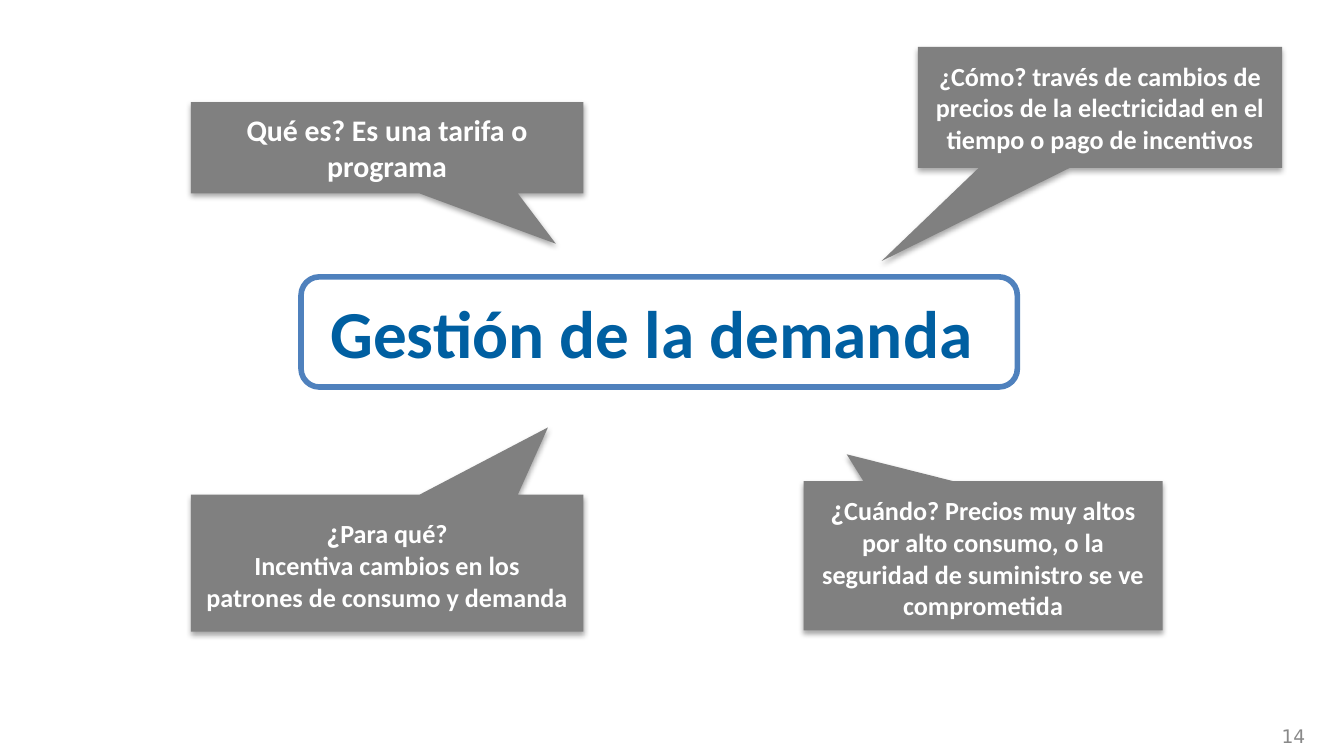
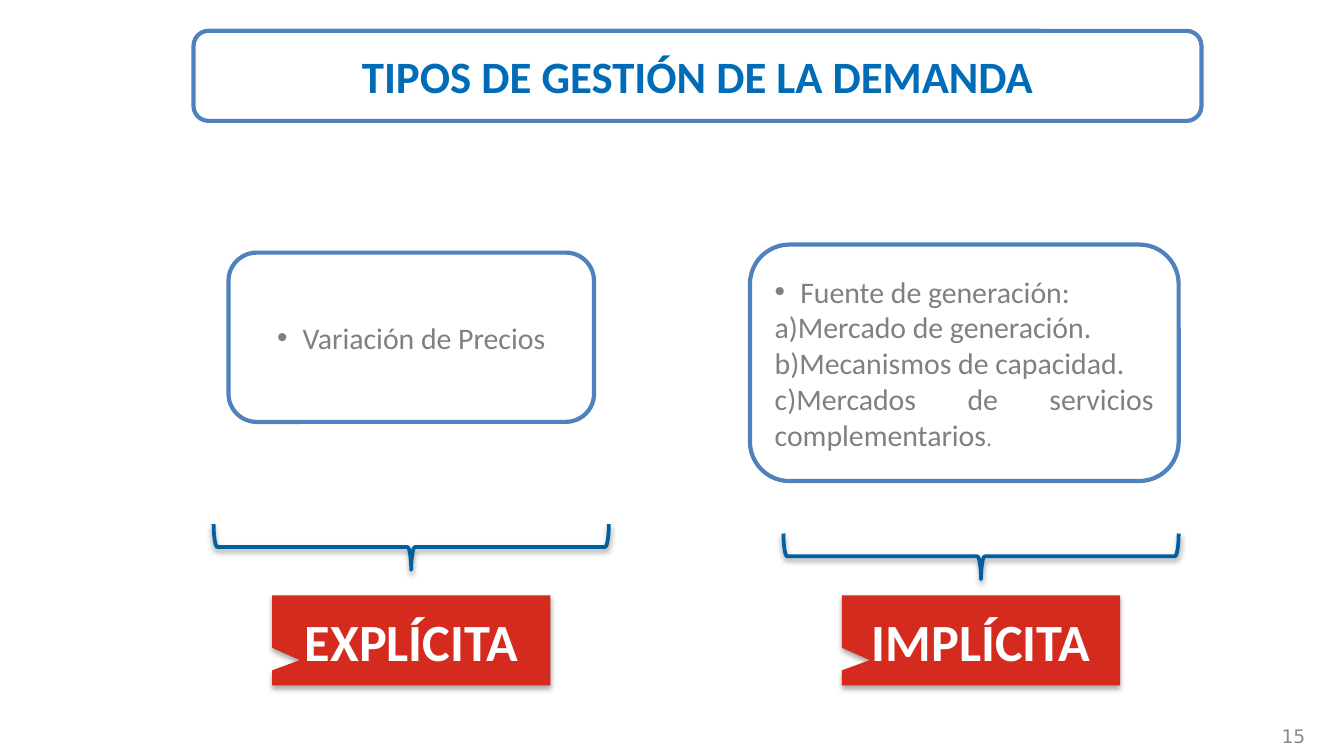
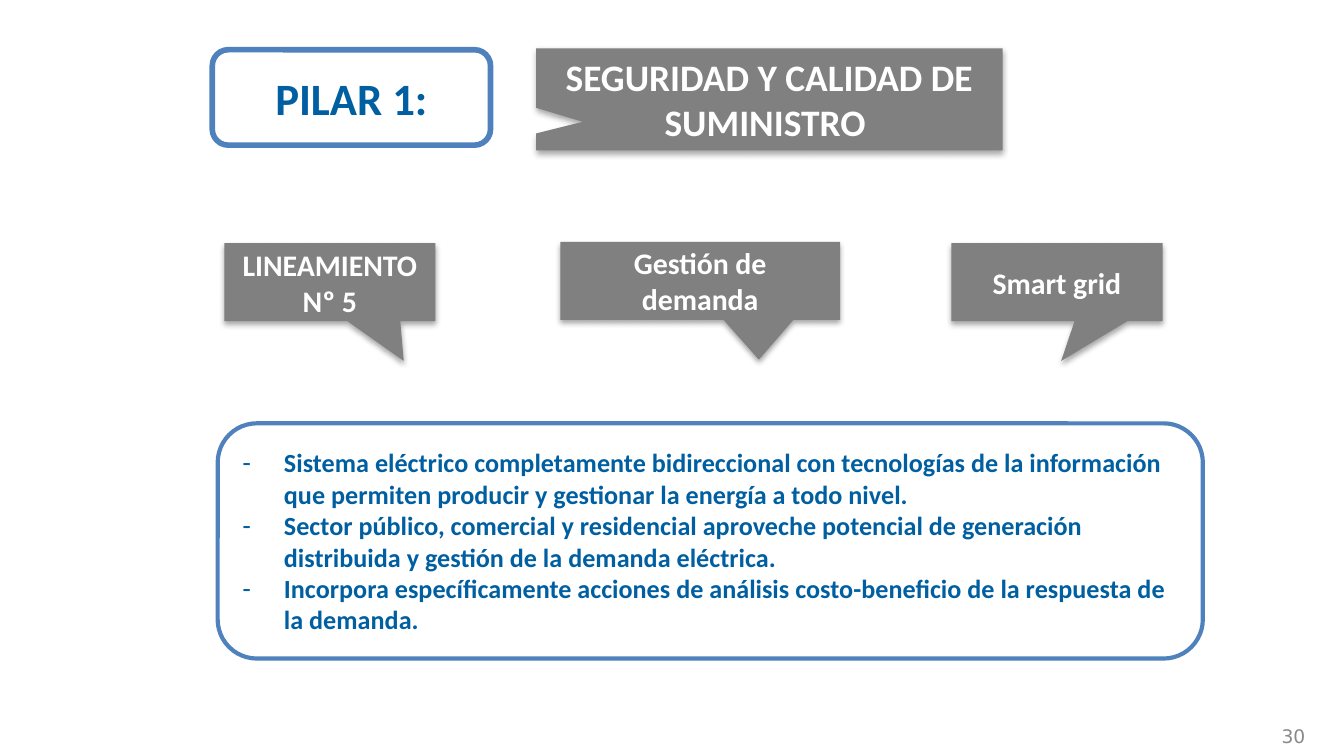
from dataclasses import dataclass

from lxml.etree import SubElement
from pptx import Presentation
from pptx.dml.color import RGBColor
from pptx.enum.shapes import MSO_SHAPE as Preset
from pptx.enum.text import MSO_ANCHOR as Anchor, PP_ALIGN as Align
from pptx.oxml.ns import qn
from pptx.util import Inches, Pt


@dataclass(frozen=True)
class Theme:
    font: str = "Calibri"
    number_font: str = "DejaVu Sans"
    white: str = "FFFFFF"
    gray: str = "808080"
    number_gray: str = "898989"
    red: str = "D52B1E"
    outline: str = "4F81BD"
    blue: str = "005FA1"
    bright_blue: str = "006CB7"
    number_size: int = 10
    period: int = 12
    small: int = 14
    body: int = 16
    heading: int = 20
    title: int = 24
    label: int = 28
    hero: int = 36
    thin: float = 2.25
    thick: float = 3
    brace: float = 2


THEME = Theme()
SIDE_NOTCH = (-0.4, 0.22)

DEMAND_TITLE = "Gestión de la demanda "
DEMAND_CALLOUTS = [
    ((6.83, 0.35, 2.71, 0.9), (-0.6, 1.27), THEME.small,
     ["¿Cómo? través de cambios de precios de la electricidad en el tiempo o pago de incentivos"]),
    ((1.42, 0.76, 2.92, 0.68), (0.43, 1.05), THEME.body,
     ["Qué es? Es una tarifa o programa"]),
    ((5.98, 3.58, 2.67, 1.11), (-0.38, -0.68), THEME.small,
     [[("¿", THEME.body),
       ("Cuándo? Precios muy altos por alto consumo, o la seguridad de suministro "
        "se ve comprometida", THEME.small)]]),
    ((1.42, 3.68, 2.92, 1.02), (0.41, -0.99), THEME.small,
     [[("¿", THEME.body), ("Para qué?", THEME.small)],
      "Incentiva cambios en los patrones de consumo y demanda"]),
]

TYPES_TITLE = "TIPOS DE GESTIÓN DE LA DEMANDA"
TYPES = [
    {"label": "EXPLÍCITA", "box": (1.7, 1.88, 2.72, 1.26), "brace_top": 3.9,
     "align": Align.CENTER, "lines": ["Variación de Precios"]},
    {"label": "IMPLÍCITA", "box": (5.58, 1.82, 3.19, 1.76), "brace_top": 3.97,
     "align": Align.JUSTIFY,
     "lines": ["Fuente de generación:",
               "a)Mercado de generación.",
               "b)Mecanismos de capacidad.",
               [("c)Mercados de servicios complementarios", THEME.body),
                (".", THEME.period)]]},
]
FIRST_TYPE_CENTER, TYPE_STEP = 3.06, 4.24
BRACE_SPAN, BRACE_DEPTH = 2.94, 0.34
LABEL_TOP, LABEL_WIDTH, LABEL_HEIGHT = 4.43, 2.07, 0.67

PILLAR_TITLE = "PILAR 1:"
PILLAR_NAME = "SEGURIDAD Y CALIDAD DE SUMINISTRO "
PILLAR_CALLOUTS = [
    ((4.17, 1.8, 2.08, 0.58), (0.21, 1.01), "Gestión de demanda"),
    ((1.67, 1.81, 1.57, 0.58), (0.35, 1.01), "LINEAMIENTO Nº 5"),
    ((7.08, 1.81, 1.57, 0.58), (0.02, 1.01), "Smart grid"),
]
PILLAR_POINTS = [
    "Sistema eléctrico completamente bidireccional con tecnologías de la información "
    "que permiten producir y gestionar la energía a todo nivel.",
    "Sector público, comercial y residencial aproveche potencial de generación "
    "distribuida y gestión de la demanda eléctrica.",
    "Incorpora específicamente acciones de análisis costo-beneficio de la respuesta "
    "de la demanda.",
]


def color(value):
    return RGBColor.from_string(value)


def add_bullet(paragraph, character, indent):
    properties = paragraph._p.get_or_add_pPr()
    properties.set("marL", str(Inches(indent)))
    properties.set("indent", str(-Inches(indent)))
    SubElement(properties, qn("a:buFont"), typeface="Arial")
    SubElement(properties, qn("a:buChar"), char=character)


def write(shape, paragraphs, size, ink, bold=True, align=Align.CENTER,
          font=THEME.font, bullet=None, bulleted=0):
    frame = shape.text_frame
    frame.word_wrap = True
    frame.vertical_anchor = Anchor.MIDDLE
    for index, content in enumerate(paragraphs):
        paragraph = frame.add_paragraph() if index else frame.paragraphs[0]
        paragraph.alignment = align
        if index < bulleted:
            add_bullet(paragraph, *bullet)
        pieces = [(content, size)] if isinstance(content, str) else content
        for text, points in pieces:
            run = paragraph.add_run()
            run.text = text
            run.font.name = font
            run.font.size = Pt(points)
            run.font.bold = bold
            run.font.color.rgb = color(ink)


def add_preset(slide, preset, box, fill=None, line=None, shadow=None):
    shape = slide.shapes.add_shape(preset, *map(Inches, box))
    shape.shadow.inherit = False
    if fill:
        shape.fill.solid()
        shape.fill.fore_color.rgb = color(fill)
    else:
        shape.fill.background()
    if line:
        ink, width = line
        shape.line.color.rgb = color(ink)
        shape.line.width = Pt(width)
    else:
        shape.line.fill.background()
    if shadow:
        distance, opacity = shadow
        effects = shape._element.spPr.find(qn("a:effectLst"))
        outer = SubElement(effects, qn("a:outerShdw"), blurRad=str(Pt(3.1)),
                           dist=str(Pt(distance)), dir="5400000", rotWithShape="0")
        black = SubElement(outer, qn("a:srgbClr"), val="000000")
        SubElement(black, qn("a:alpha"), val=str(opacity * 1000))
    return shape


def add_callout(slide, box, tail, paragraphs, size, fill=THEME.gray):
    shape = add_preset(slide, Preset.RECTANGULAR_CALLOUT, box, fill, shadow=(1.8, 35))
    shape.adjustments[0], shape.adjustments[1] = tail
    write(shape, paragraphs, size, THEME.white)


def add_panel(slide, box, paragraphs, size, ink=THEME.blue, width=THEME.thin, **style):
    shape = add_preset(slide, Preset.ROUNDED_RECTANGLE, box, THEME.white,
                       (THEME.outline, width))
    write(shape, paragraphs, size, ink, **style)


def add_brace(slide, center, top):
    box = (center - BRACE_DEPTH / 2, top + (BRACE_DEPTH - BRACE_SPAN) / 2,
           BRACE_DEPTH, BRACE_SPAN)
    shape = add_preset(slide, Preset.LEFT_BRACE, box, line=(THEME.blue, THEME.brace),
                       shadow=(1.6, 38))
    shape.rotation = 270


def add_slide(presentation, number):
    slide = presentation.slides.add_slide(presentation.slide_layouts[6])
    shape = slide.shapes.add_textbox(*map(Inches, (7.48, 5.4, 2.33, 0.16)))
    write(shape, [str(number)], THEME.number_size, THEME.number_gray, bold=False,
          align=Align.RIGHT, font=THEME.number_font)
    return slide


def build_demand(presentation):
    slide = add_slide(presentation, 14)
    for box, tail, size, paragraphs in DEMAND_CALLOUTS:
        add_callout(slide, box, tail, paragraphs, size)
    add_panel(slide, (2.24, 2.06, 5.33, 0.82), [DEMAND_TITLE], THEME.hero,
              width=THEME.thick)


def build_types(presentation):
    slide = add_slide(presentation, 15)
    add_panel(slide, (1.44, 0.23, 7.5, 0.67), [TYPES_TITLE], THEME.title,
              THEME.bright_blue)
    for index, kind in enumerate(TYPES):
        center = FIRST_TYPE_CENTER + index * TYPE_STEP
        add_brace(slide, center, kind["brace_top"])
        add_panel(slide, kind["box"], kind["lines"], THEME.body, THEME.gray, bold=False,
                  align=kind["align"], bullet=("•", 0.19), bulleted=1)
        label_box = (center - LABEL_WIDTH / 2, LABEL_TOP, LABEL_WIDTH, LABEL_HEIGHT)
        add_callout(slide, label_box, SIDE_NOTCH, [kind["label"]], THEME.label, THEME.red)


def build_pillar(presentation):
    slide = add_slide(presentation, 30)
    for box, tail, text in PILLAR_CALLOUTS:
        add_callout(slide, box, tail, [text], THEME.body)
    add_panel(slide, (1.62, 3.15, 7.33, 1.75), PILLAR_POINTS, THEME.small,
              align=Align.LEFT, bullet=("-", 0.31), bulleted=len(PILLAR_POINTS))
    add_callout(slide, (3.99, 0.36, 3.47, 0.76), SIDE_NOTCH, [PILLAR_NAME], THEME.heading)
    add_panel(slide, (1.58, 0.37, 2.07, 0.71), [PILLAR_TITLE], THEME.title,
              width=THEME.thick)


def main():
    presentation = Presentation()
    presentation.slide_width = Inches(10)
    presentation.slide_height = presentation.slide_width * 9 // 16
    for build in (build_demand, build_types, build_pillar):
        build(presentation)
    presentation.save("out.pptx")


if __name__ == "__main__":
    main()
